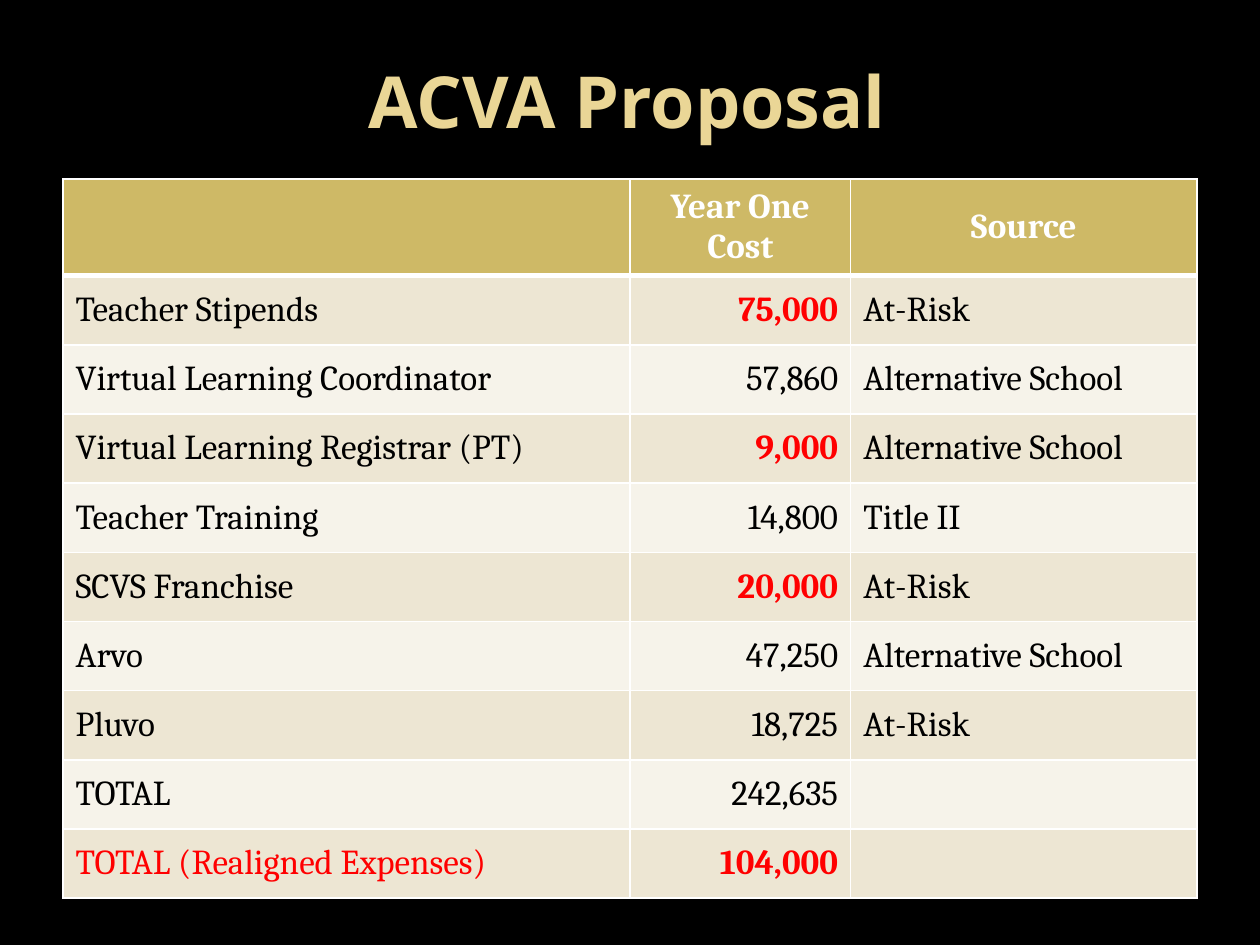
from lxml.etree import SubElement as Sub
from pptx import Presentation
from pptx.dml.color import RGBColor as Rgb
from pptx.enum.text import MSO_ANCHOR as Anchor, PP_ALIGN as Align
from pptx.oxml.ns import qn
from pptx.util import Cm, Pt

HUES = {
    "back": "000000",
    "title": "EAD696",
    "head": "CEB966",
    "odd": "EDE6D3",
    "even": "F6F3EA",
    "rule": "FFFFFF",
    "text": "000000",
    "alert": "FF0000",
}
COLS = (11.43, 4.45, 6.98)
HEAD = ("", "Year One Cost", "Source")
COSTS = (
    ("Teacher Stipends", "75,000", "At-Risk"),
    ("Virtual Learning Coordinator", "57,860", "Alternative School"),
    ("Virtual Learning Registrar (PT)", "9,000", "Alternative School"),
    ("Teacher Training", "14,800", "Title II"),
    ("SCVS Franchise", "20,000", "At-Risk"),
    ("Arvo", "47,250", "Alternative School"),
    ("Pluvo", "18,725", "At-Risk"),
    ("TOTAL", "242,635", ""),
    ("TOTAL (Realigned Expenses)", "104,000", ""),
)
ALERTS = {"75,000", "9,000", "20,000", "104,000"}


def hue(name):
    return Rgb.from_string(HUES[name])


def write(frame, text, size=20, font="Cambria", color="text", bold=False, align=Align.LEFT):
    para = frame.paragraphs[0]
    para.alignment = align
    para.font.size = Pt(size)
    if not text:
        return
    run = para.add_run()
    run.text = text
    run.font.size = Pt(size)
    run.font.name = font
    run.font.bold = bold
    run.font.color.rgb = hue(color)


def edge(cell, side, width):
    line = Sub(cell._tc.get_or_add_tcPr(), qn(f"a:ln{side}"), w=str(Pt(width)))
    fill = Sub(line, qn("a:solidFill"))
    Sub(fill, qn("a:srgbClr"), val=HUES["rule"])


def dress(cell, fill, top=1, base=1):
    for side, width in (("L", 1), ("R", 1), ("T", top), ("B", base)):
        edge(cell, side, width)
    cell.fill.solid()
    cell.fill.fore_color.rgb = hue(fill)
    cell.vertical_anchor = Anchor.MIDDLE


def add_title(slide, left, top, width, height):
    box = slide.shapes.add_textbox(Cm(left), Cm(top), Cm(width), Cm(height))
    frame = box.text_frame
    frame.word_wrap = True
    frame.vertical_anchor = Anchor.MIDDLE
    write(frame, "ACVA Proposal", size=41, font="Open Sans", color="title",
          bold=True, align=Align.CENTER)


def add_costs(slide, left, top, width, height, first=1.85):
    step = (height - first) / len(COSTS)
    grid = slide.shapes.add_table(len(COSTS) + 1, len(COLS), Cm(left), Cm(top),
                                  Cm(width), Cm(height)).table
    for col, size in zip(grid.columns, COLS):
        col.width = Cm(width * size / sum(COLS))
    for i, row in enumerate(grid.rows):
        row.height = Cm(step if i else first)

    for j, text in enumerate(HEAD):
        cell = grid.cell(0, j)
        dress(cell, "head", base=3)
        write(cell.text_frame, text, color="rule", bold=True, align=Align.CENTER)

    for i, row in enumerate(COSTS, 1):
        for j, text in enumerate(row):
            cell = grid.cell(i, j)
            dress(cell, "odd" if i % 2 else "even", top=3 if i == 1 else 1)
            alert = text in ALERTS
            red = alert or i == len(COSTS)
            write(cell.text_frame, text, color="alert" if red else "text",
                  bold=alert, align=Align.RIGHT if j == 1 else Align.LEFT)


def main():
    deck = Presentation()
    deck.slide_width, deck.slide_height = Cm(25.4), Cm(19.05)
    slide = deck.slides.add_slide(deck.slide_layouts[6])
    slide.background.fill.solid()
    slide.background.fill.fore_color.rgb = hue("back")
    add_title(slide, 2.9, 0.64, 19.5, 2.74)
    add_costs(slide, 1.27, 3.61, 22.86, 14.4)
    deck.save("out.pptx")


if __name__ == "__main__":
    main()
